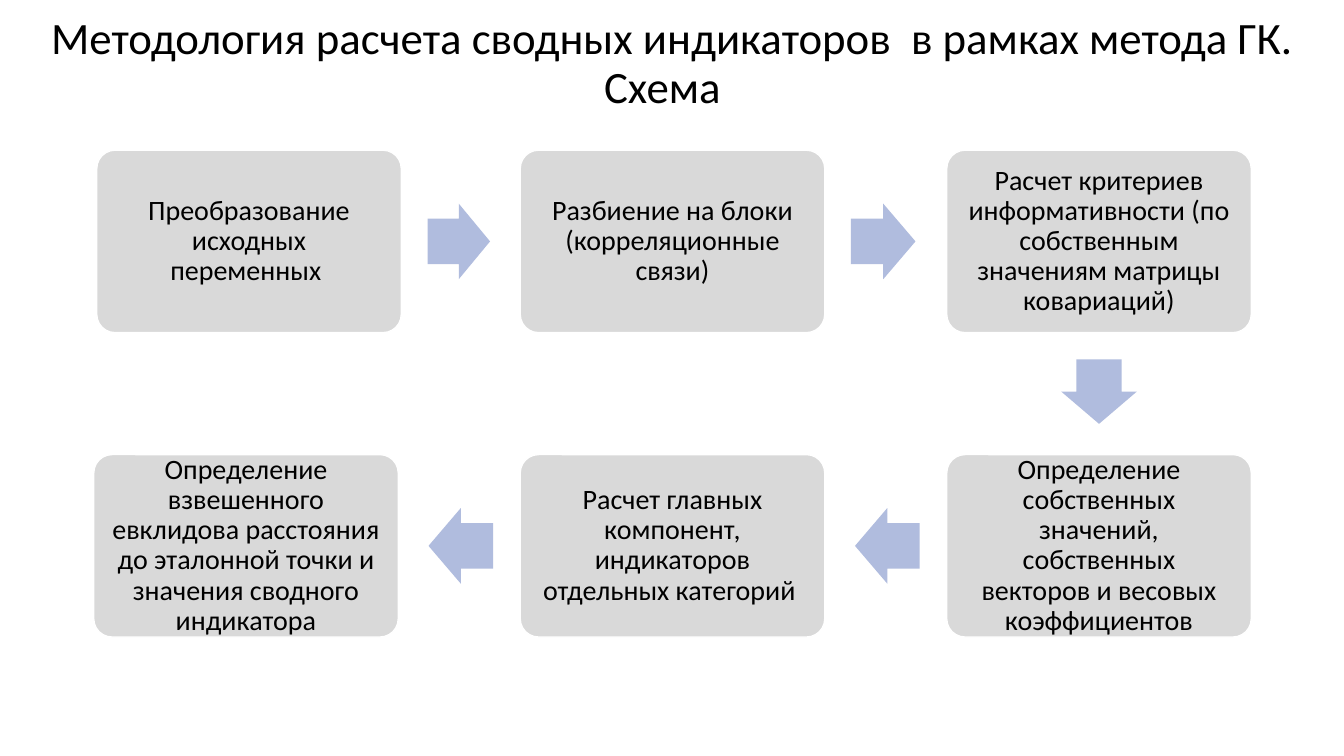
"""Build the slide with the six-step scheme for calculating summary indicators."""
from pptx import Presentation
from pptx.dml.color import RGBColor
from pptx.enum.shapes import MSO_SHAPE as SHAPE
from pptx.enum.text import MSO_ANCHOR as ANCHOR, MSO_AUTO_SIZE as AUTO, PP_ALIGN as ALIGN
from pptx.util import Pt

PX = 9144
BLACK = RGBColor(0x00, 0x00, 0x00)
WHITE = RGBColor(0xFF, 0xFF, 0xFF)
GREY = RGBColor(0xD9, 0xD9, 0xD9)
BLUE = RGBColor(0xB0, 0xBC, 0xDE)

BOX_W, BOX_H = 302, 181
ARROW_H = 75
TOP, BOTTOM = 149, 451
STEPS = [
    (96, TOP, "Преобразование исходных переменных "),
    (516, TOP, "Разбиение на блоки (корреляционные связи)"),
    (939, TOP, "Расчет критериев информативности (по собственным значениям матрицы ковариаций)"),
    (939, BOTTOM, "Определение собственных значений, собственных векторов и весовых коэффициентов"),
    (516, BOTTOM, "Расчет главных компонент, индикаторов отдельных категорий "),
    (93, BOTTOM, "Определение взвешенного евклидова расстояния до эталонной точки и значения сводного индикатора"),
]
ARROWS = [
    (424, 202, 62, 0),
    (844, 202, 64, 0),
    (1058, 351, 64, 90),
    (848, 504, 64, 180),
    (425, 504, 64, 180),
]


def write(sp, text, size, margins):
    tf = sp.text_frame
    tf.text = text
    frame = {"word_wrap": True, "auto_size": AUTO.NONE, "vertical_anchor": ANCHOR.MIDDLE}
    for name, value in (frame | margins).items():
        setattr(tf, name, value)
    p = tf.paragraphs[0]
    p.alignment = ALIGN.CENTER
    p.line_spacing = 0.9
    font = p.runs[0].font
    for name, value in {"name": "Calibri", "size": Pt(size), "bold": False}.items():
        setattr(font, name, value)
    font.color.rgb = BLACK


def add_shape(kind, box, fill, adjustments):
    sp = s.shapes.add_shape(kind, *(v * PX for v in box))
    sp.shadow.inherit = False
    sp.fill.solid()
    sp.fill.fore_color.rgb = fill
    for i, value in enumerate(adjustments):
        sp.adjustments[i] = value
    return sp


prs = Presentation()
prs.slide_width, prs.slide_height = 1333 * PX, 750 * PX
s = prs.slides.add_slide(prs.slide_layouts[5])

title = s.shapes.title
for name, value in {"left": 33, "top": 33, "width": 1268, "height": 62}.items():
    setattr(title, name, value * PX)
write(title, "Методология расчета сводных индикаторов  в рамках метода ГК. Схема  ", 32, {})

inset = {f"margin_{side}": 13 * PX for side in ("left", "top", "right", "bottom")}
for x, y, text in STEPS:
    sp = add_shape(SHAPE.ROUNDED_RECTANGLE, (x, y, BOX_W, BOX_H), GREY, [0.1])
    sp.line.color.rgb = WHITE
    sp.line.width = Pt(1)
    write(sp, text, 20, inset)

for x, y, width, rotation in ARROWS:
    sp = add_shape(SHAPE.RIGHT_ARROW, (x, y, width, ARROW_H), BLUE, [0.6, 0.5])
    sp.line.fill.background()
    sp.rotation = rotation

prs.save("out.pptx")
